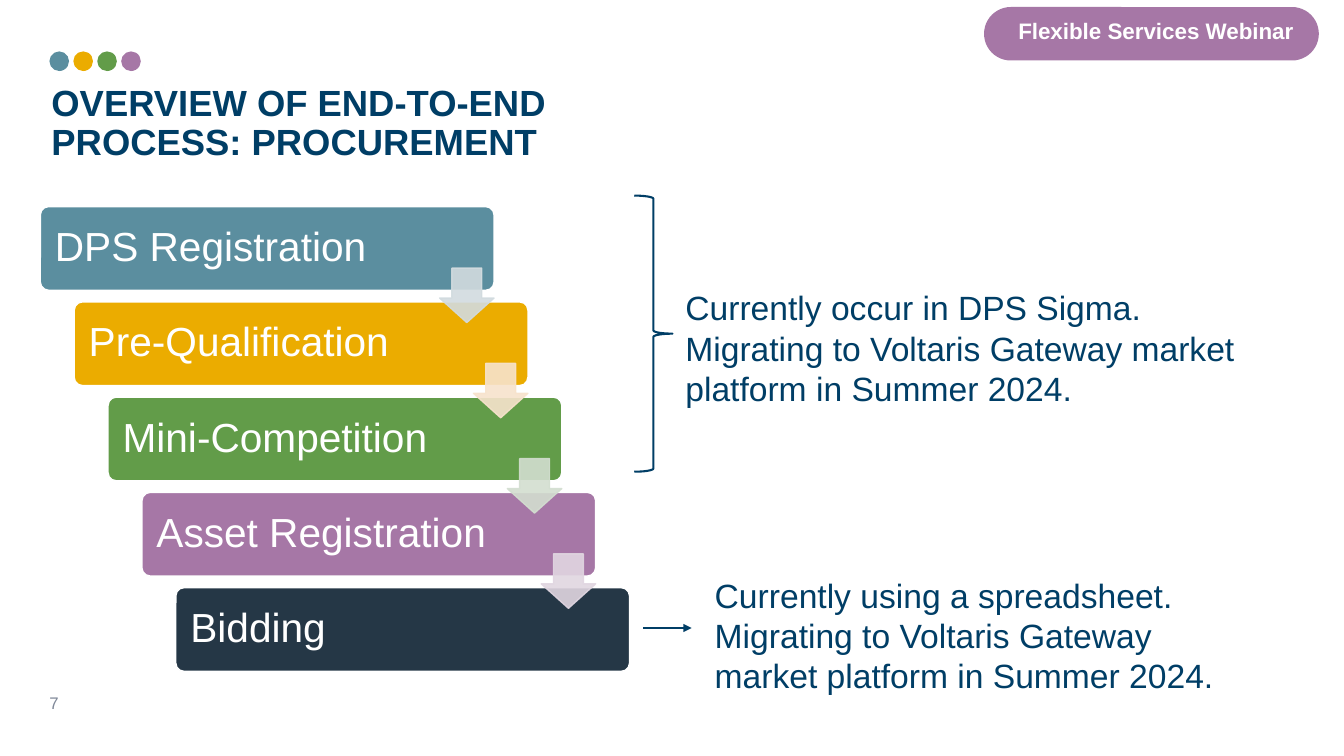
from lxml import etree
from pptx import Presentation
from pptx.dml.color import RGBColor
from pptx.enum.shapes import MSO_CONNECTOR, MSO_SHAPE
from pptx.enum.text import MSO_ANCHOR, PP_ALIGN
from pptx.oxml.ns import qn
from pptx.util import Inches, Pt

ROUND = MSO_SHAPE.ROUNDED_RECTANGLE
OVAL = MSO_SHAPE.OVAL
DOWN = MSO_SHAPE.DOWN_ARROW
BRACE = MSO_SHAPE.RIGHT_BRACE
STRAIGHT = MSO_CONNECTOR.STRAIGHT
TOP, MIDDLE = MSO_ANCHOR.TOP, MSO_ANCHOR.MIDDLE
LEFT, CENTER = PP_ALIGN.LEFT, PP_ALIGN.CENTER

NAVY = RGBColor(0x00, 0x3E, 0x66)
WHITE = RGBColor(0xFF, 0xFF, 0xFF)
GREY = RGBColor(0x80, 0x89, 0x99)
TEAL = RGBColor(0x5B, 0x8E, 0x9F)
GOLD = RGBColor(0xEB, 0xAC, 0x00)
GREEN = RGBColor(0x62, 0x9C, 0x49)
PURPLE = RGBColor(0xA6, 0x77, 0xA6)
SLATE = RGBColor(0x25, 0x37, 0x46)
PALE_TEAL = RGBColor(0xD2, 0xDB, 0xDF)
PALE_GOLD = RGBColor(0xF7, 0xE3, 0xCC)
PALE_GREEN = RGBColor(0xD3, 0xDE, 0xD0)
PALE_PURPLE = RGBColor(0xE1, 0xD6, 0xE1)

prs = Presentation()
prs.slide_width, prs.slide_height = Inches(13.33), Inches(7.5)
W, H = prs.slide_width / 100, prs.slide_height / 100
slide = prs.slides.add_slide(prs.slide_layouts[6])


def add_shape(kind, x, y, w, h, fill=None, line=None, width=1, adj=()):
    s = slide.shapes.add_shape(kind, int(x * W), int(y * H), int(w * W), int(h * H))
    s.shadow.inherit = False
    for paint, color in ((s.fill, fill), (s.line.fill, line)):
        if color is None:
            paint.background()
        else:
            paint.solid()
            paint.fore_color.rgb = color
    if line is not None:
        s.line.width = Pt(width)
    for i, value in enumerate(adj):
        s.adjustments[i] = value
    return s


def write(s, lines, size, color, bold=False, align=LEFT, anchor=TOP,
          spacing=1.0, insets=(0.1, 0.05, 0.1, 0.05)):
    tf = s.text_frame
    frame = {"word_wrap": True, "vertical_anchor": anchor}
    for side, value in zip(("left", "top", "right", "bottom"), insets):
        frame["margin_" + side] = Inches(value)
    for name, value in frame.items():
        setattr(tf, name, value)
    font = {"name": "Arial", "size": Pt(size), "bold": bold}
    for i, text in enumerate(lines):
        p = tf.add_paragraph() if i else tf.paragraphs[0]
        p.alignment, p.line_spacing = align, spacing
        r = p.add_run()
        r.text = text
        for name, value in font.items():
            setattr(r.font, name, value)
        r.font.color.rgb = color


for i, color in enumerate((TEAL, GOLD, GREEN, PURPLE)):
    add_shape(OVAL, 3.68 + 1.78 * i, 6.8, 1.46, 2.6, color)

pill = add_shape(ROUND, 73.22, 0.93, 24.91, 7.07, PURPLE, adj=(0.5,))
write(pill, ["Flexible Services Webinar"], 16, WHITE, bold=True, align=CENTER,
      anchor=MIDDLE, insets=(0.16, 0, 0.07, 0.06))

MIGRATING = "Migrating to Voltaris Gateway market platform in Summer 2024."
texts = [
    ((2.93, 90.93, 5.48, 4), ["7"], {"size": 12, "color": GREY}),
    ((3.83, 11.2, 46.21, 10.13), ["OVERVIEW OF END-TO-END PROCESS: PROCUREMENT"],
     {"size": 26, "color": NAVY, "bold": True, "spacing": 0.9, "insets": (0, 0, 0, 0)}),
    ((50.26, 37.33, 49.5, 17.47), ["Currently occur in DPS Sigma.", MIGRATING],
     {"size": 24, "color": NAVY}),
    ((52.44, 75.33, 41.04, 17.47), ["Currently using a spreadsheet.", MIGRATING],
     {"size": 24, "color": NAVY}),
]
for (x, y, w, h), lines, fmt in texts:
    tb = slide.shapes.add_textbox(int(x * W), int(y * H), int(w * W), int(h * H))
    write(tb, lines, **fmt)

add_shape(BRACE, 47.19, 25.87, 2.85, 36.53, line=NAVY, width=1.5)

c = slide.shapes.add_connector(STRAIGHT, int(47.86 * W), int(83.07 * H),
                               int(51.46 * W), int(83.07 * H))
c.line.color.rgb = NAVY
c.line.width = Pt(1.5)
etree.SubElement(c.line._get_or_add_ln(), qn("a:tailEnd"), type="triangle")
etree.SubElement(c._element.spPr, qn("a:effectLst"))

STEP_X, STEP_Y = 2.52, 12.6
steps = [
    ("DPS Registration", TEAL),
    ("Pre-Qualification", GOLD),
    ("Mini-Competition", GREEN),
    ("Asset Registration", PURPLE),
    ("Bidding", SLATE),
]
for i, (label, color) in enumerate(steps):
    bar = add_shape(ROUND, 3 + STEP_X * i, 27.33 + STEP_Y * i, 33.76, 11.07,
                    color, WHITE, adj=(0.1,))
    write(bar, [label], 29, WHITE, anchor=MIDDLE, spacing=0.9,
          insets=(0.12, 0.12, 0.12, 0.12))

for i, color in enumerate((PALE_TEAL, PALE_GOLD, PALE_GREEN, PALE_PURPLE)):
    arrow = add_shape(DOWN, 32.71 + STEP_X * i, 35.47 + STEP_Y * i, 4.05, 7.2,
                      color, color, adj=(0.55, 0.45))
    for clr in list(arrow._element.spPr.iter(qn("a:srgbClr"))):
        etree.SubElement(clr, qn("a:alpha"), val="90000")

prs.save("out.pptx")
